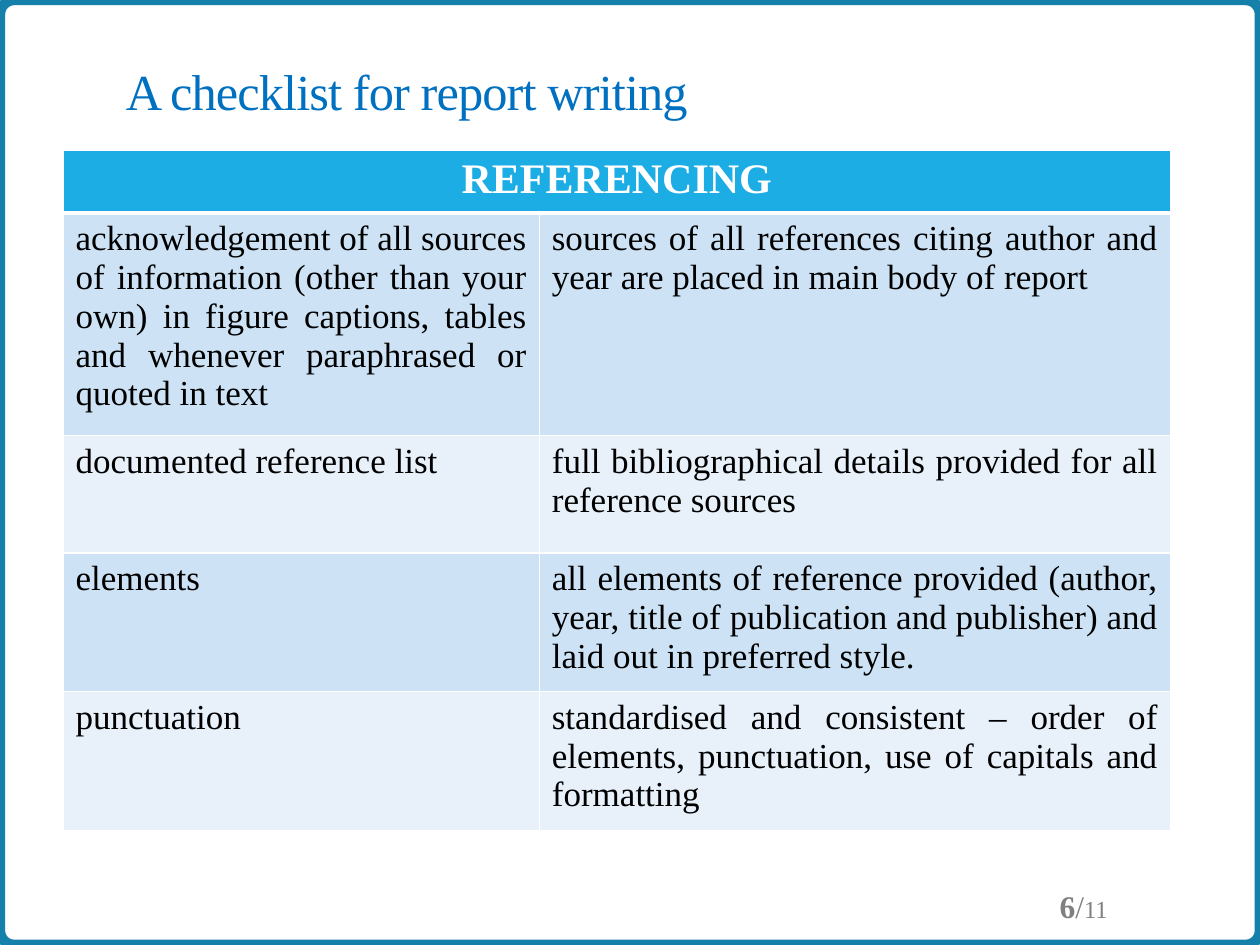
from dataclasses import dataclass

from lxml.etree import SubElement
from pptx import Presentation
from pptx.dml.color import RGBColor
from pptx.enum.shapes import MSO_SHAPE
from pptx.enum.text import MSO_ANCHOR, PP_ALIGN
from pptx.oxml.ns import qn
from pptx.util import Inches, Pt

TITLE = "A checklist for report writing"
HEADING = "REFERENCING"
CHECKLIST = [
    ("acknowledgement of all sources of information (other than your own) in figure "
     "captions, tables and whenever paraphrased or quoted in text",
     "sources of all references citing author and year are placed in main body of report"),
    ("documented reference list",
     "full bibliographical details provided for all reference sources"),
    ("elements",
     "all elements of reference provided (author, year, title of publication and "
     "publisher) and laid out in preferred style."),
    ("punctuation",
     "standardised and consistent – order of elements, punctuation, use of capitals "
     "and formatting"),
]
PAGE_NUMBER = [("6", 18, True), ("/", 18, False), ("11", 14, False)]

SLIDE_SIZE = (10, 7.5)
TITLE_BOX = (0.9, 0.13, 8.25, 0.88)
PAGE_BOX = (7.81, 6.99, 1.08, 0.4)
TABLE_ORIGIN = (0.5, 1.19)
COLUMN_WIDTHS = (3.78, 5.01)
ROW_HEIGHTS = (0.46, 1.64, 0.93, 1.02, 1.02)


@dataclass(frozen=True)
class Theme:
    font: str = "Times New Roman"
    frame: str = "1580A9"
    title: str = "0070C0"
    heading_fill: str = "1CADE4"
    bands: tuple = ("CDE3F5", "E8F1FA")
    white: str = "FFFFFF"
    black: str = "000000"
    grey: str = "808080"
    title_size: float = 28.8
    heading_size: int = 24
    body_size: int = 20


THEME = Theme()


def set_font(font, size, color, bold=False):
    font.name = THEME.font
    font.size = Pt(size)
    font.bold = bold
    font.color.rgb = RGBColor.from_string(color)


def add_frame(slide):
    shape = slide.shapes.add_shape(
        MSO_SHAPE.ROUNDED_RECTANGLE, 0, 0, *map(Inches, SLIDE_SIZE))
    shape.adjustments[0] = 0.015
    shape.shadow.inherit = False
    shape.fill.background()
    shape.line.color.rgb = RGBColor.from_string(THEME.frame)
    shape.line.width = Pt(6)


def add_text_box(slide, box, anchor):
    frame = slide.shapes.add_textbox(*map(Inches, box)).text_frame
    frame.word_wrap = True
    frame.vertical_anchor = anchor
    return frame.paragraphs[0]


def add_title(slide):
    paragraph = add_text_box(slide, TITLE_BOX, MSO_ANCHOR.BOTTOM)
    paragraph.line_spacing = 0.85
    run = paragraph.add_run()
    run.text = TITLE
    set_font(paragraph.font, THEME.title_size, THEME.title)
    run.font._element.set("spc", "-50")


def add_page_number(slide):
    paragraph = add_text_box(slide, PAGE_BOX, MSO_ANCHOR.MIDDLE)
    paragraph.alignment = PP_ALIGN.RIGHT
    for text, size, bold in PAGE_NUMBER:
        run = paragraph.add_run()
        run.text = text
        set_font(run.font, size, THEME.grey, bold)


def set_borders(cell, bottom_width, top_width):
    properties = cell._tc.get_or_add_tcPr()
    widths = {"a:lnL": 1, "a:lnR": 1, "a:lnT": top_width, "a:lnB": bottom_width}
    for tag, width in widths.items():
        line = SubElement(properties, qn(tag), w=str(Pt(width)))
        fill = SubElement(line, qn("a:solidFill"))
        SubElement(fill, qn("a:srgbClr"), val=THEME.white)


def fill_cell(cell, text, fill, alignment, size, color, bold):
    cell.text = text
    paragraph = cell.text_frame.paragraphs[0]
    paragraph.alignment = alignment
    set_font(paragraph.font, size, color, bold)
    cell.fill.solid()
    cell.fill.fore_color.rgb = RGBColor.from_string(fill)


def add_checklist(slide):
    rows = [(HEADING, "")] + CHECKLIST
    size = (sum(COLUMN_WIDTHS), sum(ROW_HEIGHTS))
    table = slide.shapes.add_table(
        len(rows), len(COLUMN_WIDTHS), *map(Inches, TABLE_ORIGIN + size)).table
    for column, width in zip(table.columns, COLUMN_WIDTHS):
        column.width = Inches(width)
    for row, height in zip(table.rows, ROW_HEIGHTS):
        row.height = Inches(height)
    for row_index, texts in enumerate(rows):
        heading = row_index == 0
        if heading:
            style = (THEME.heading_fill, PP_ALIGN.CENTER,
                     THEME.heading_size, THEME.white, True)
        else:
            style = (THEME.bands[(row_index - 1) % 2], PP_ALIGN.JUSTIFY,
                     THEME.body_size, THEME.black, False)
        for column_index, text in enumerate(texts):
            cell = table.cell(row_index, column_index)
            set_borders(cell, 3 if heading else 1, 3 if row_index == 1 else 1)
            fill_cell(cell, text, *style)
    table.cell(0, 0).merge(table.cell(0, 1))


def main():
    presentation = Presentation()
    presentation.slide_width, presentation.slide_height = map(Inches, SLIDE_SIZE)
    slide = presentation.slides.add_slide(presentation.slide_layouts[6])
    add_frame(slide)
    add_title(slide)
    add_page_number(slide)
    add_checklist(slide)
    presentation.save("out.pptx")


if __name__ == "__main__":
    main()
